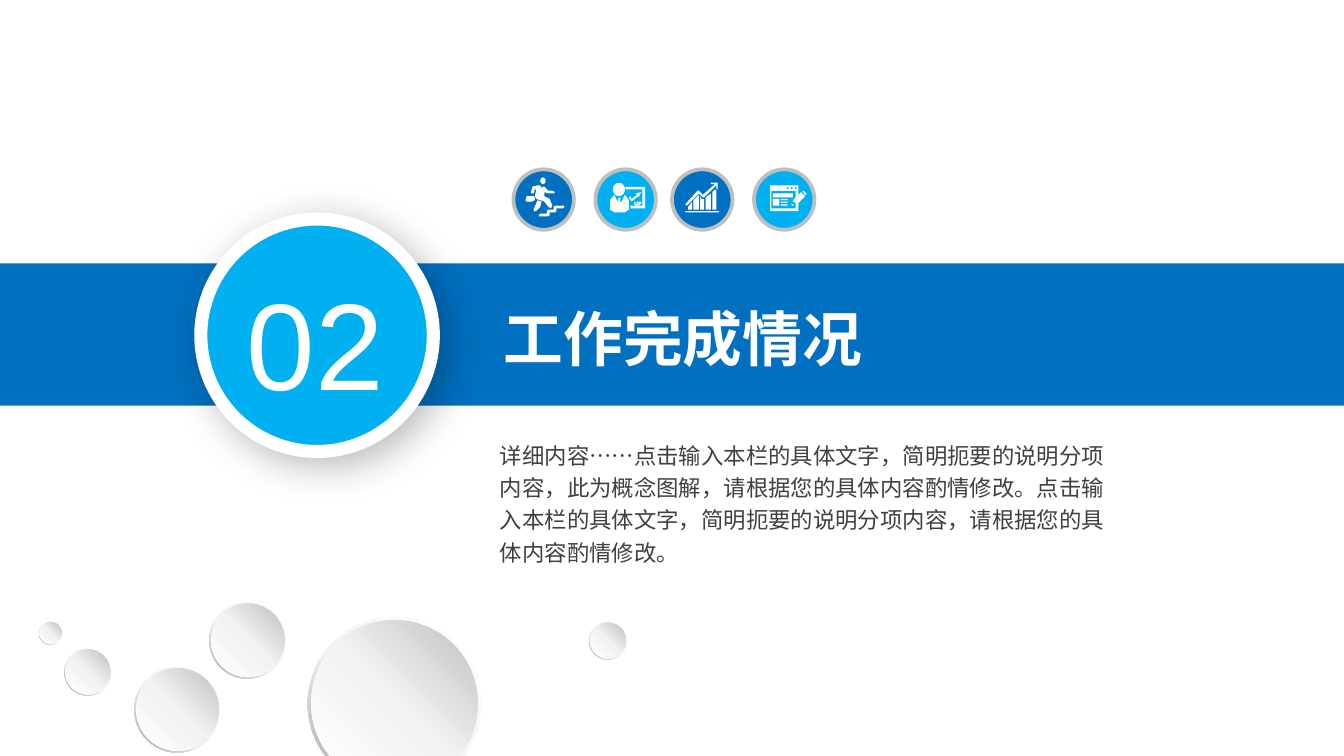
"""Build a section-divider slide with a banner, a numbered badge, four icons and bubbles."""
from dataclasses import dataclass
from typing import Any, Optional, Union

import lxml.etree
import pptx
import pptx.dml.color
import pptx.enum.shapes
import pptx.enum.text
import pptx.oxml.ns
import pptx.util

Pt = pptx.util.Pt
qn = pptx.oxml.ns.qn
SHAPES = pptx.enum.shapes.MSO_SHAPE
ALIGN = pptx.enum.text.PP_ALIGN

FONT = "Arial"
WHITE, BLUE, SKY, GREY, INK = "FFFFFF", "0170C0", "01B0F1", "BFBFBF", "404040"
ICON_TOP, ICON_SIZE, GRID = 90.72, 32.4, 0.72
RIM_STOPS = ((0, WHITE), (55, "F2F2F2"), (100, "A6A6A6"))
DISC_STOPS = ((0, WHITE), (51, "F2F2F2"), (100, GREY))

Contour = tuple[tuple[int, int], ...]
Stops = tuple[tuple[int, str], ...]


@dataclass(frozen=True)
class Outline:
    contours: tuple[Contour, ...]


@dataclass(frozen=True)
class Preset:
    kind: Any
    left: int
    top: int
    width: int
    height: int


@dataclass(frozen=True)
class Icon:
    left: float
    fill: str
    pieces: tuple[Union[Outline, Preset], ...]


@dataclass(frozen=True)
class Bubble:
    left: float
    top: float
    size: float


@dataclass(frozen=True)
class Label:
    text: str
    left: float
    top: float
    width: float
    height: float
    size: float
    colour: str
    bold: bool = False
    align: Any = ALIGN.LEFT
    line_spacing: Optional[float] = None
    insets: tuple[float, float] = (5.04, 2.88)


def outline(*contours: Contour) -> Outline:
    return Outline(contours)


def bar(left: int, top: int, width: int, height: int) -> Preset:
    return Preset(SHAPES.RECTANGLE, left, top, width, height)


def dot(centre: int) -> Contour:
    return ((centre, 13), (centre - 1, 14), (centre, 15), (centre + 1, 14))


RUNNER = (
    outline(((20, 33), (25, 33), (25, 31), (26, 30), (30, 30), (30, 28), (31, 27), (38, 27), (38, 28),
             (37, 29), (32, 29), (32, 31), (31, 32), (27, 32), (27, 34), (26, 35), (19, 35), (19, 34))),
    outline(((10, 24), (14, 24), (16, 23), (16, 21), (15, 20), (10, 20), (9, 23))),
    outline(((15, 30), (18, 23), (21, 24), (20, 28), (17, 31), (15, 31))),
    outline(((22, 13), (23, 13), (26, 16), (29, 16), (31, 17), (30, 18), (26, 18), (23, 17), (23, 20),
             (27, 22), (29, 27), (28, 29), (26, 28), (23, 24), (17, 22), (16, 20), (17, 15), (16, 15),
             (15, 18), (13, 18), (14, 13), (18, 12), (20, 12), (21, 14))),
    Preset(SHAPES.OVAL, 20, 6, 4, 5),
)
PRESENTER = (
    outline(((22, 13), (23, 15), (35, 15), (35, 27), (26, 27), (26, 29), (37, 29), (37, 13))),
    Preset(SHAPES.OVAL, 13, 10, 9, 10),
    outline(((26, 20), (25, 21), (27, 24), (32, 20), (32, 21), (34, 17), (30, 18), (31, 19), (27, 22))),
    outline(((22, 19), (19, 25), (18, 22), (19, 22), (18, 21), (17, 22), (17, 25), (14, 19), (11, 23),
             (11, 30), (14, 32), (22, 32), (25, 30), (25, 23))),
    outline(((29, 24), (29, 26), (30, 27), (31, 27), (32, 26), (32, 24), (31, 24), (31, 26), (30, 26), (30, 24))),
    outline(((32, 24), (32, 27), (33, 27), (33, 26), (34, 26), (34, 24))),
)
GROWTH = (
    bar(10, 31, 25, 1),
    outline(((12, 30), (15, 30), (15, 24), (12, 28))),
    outline(((16, 30), (20, 30), (20, 19), (16, 23))),
    outline(((21, 30), (24, 30), (24, 22), (22, 22), (21, 20))),
    outline(((25, 30), (29, 30), (29, 18), (25, 21))),
    outline(((30, 30), (33, 30), (33, 16), (32, 15), (30, 17))),
    outline(((11, 27), (20, 18), (23, 21), (24, 21), (33, 12), (33, 15), (34, 15), (34, 10), (29, 10),
             (29, 11), (32, 11), (23, 19), (20, 16), (19, 16), (10, 26))),
)
BROWSER = (
    outline(((12, 12), (33, 12), (33, 31), (12, 31)), ((13, 16), (13, 29), (31, 29), (31, 16)),
            *(dot(centre) for centre in (25, 28, 31))),
    bar(14, 18, 15, 3),
    bar(14, 22, 5, 5),
    *(bar(20, top, 5, 1) for top in (22, 24, 26)),
    outline(((28, 25), (28, 27), (30, 27))),
    outline(((38, 19), (39, 19), (39, 18), (37, 16), (36, 16))),
    outline(((35, 17), (29, 23), (29, 24), (31, 25), (32, 26), (38, 20))),
)
ICONS = (Icon(275.04, BLUE, RUNNER), Icon(318.96, SKY, PRESENTER),
         Icon(360, BLUE, GROWTH), Icon(403.92, SKY, BROWSER))
BUBBLES = (Bubble(72, 357.12, 46.08), Bubble(315.6, 333.2, 20.16), Bubble(164.88, 330.48, 92.88),
           Bubble(112.2, 322.56, 41.04), Bubble(34.4, 347.4, 25.2), Bubble(20.9, 333, 12.4))
TITLE = Label("工作完成情况", 262.8, 158.4, 278.64, 46.08, 32, WHITE, bold=True, insets=(7.2, 3.6))
DETAIL = Label(
    "详细内容……点击输入本栏的具体文字，简明扼要的说明分项内容，此为概念图解，请根据您的具体内容酌情修改。"
    "点击输入本栏的具体文字，简明扼要的说明分项内容，请根据您的具体内容酌情修改。",
    262.8, 231.12, 335.52, 75.6, 12, INK, line_spacing=1.2)
NUMBER = Label("02", 121.68, 140.4, 94.32, 85.68, 66, WHITE, align=ALIGN.CENTER)


def rgb(colour: str) -> pptx.dml.color.RGBColor:
    return pptx.dml.color.RGBColor.from_string(colour)


def paint(shape: Any, fill: str, line: Optional[str] = None, line_width: float = 0) -> None:
    shape.shadow.inherit = False
    shape.fill.solid()
    shape.fill.fore_color.rgb = rgb(fill)
    if line is None:
        shape.line.fill.background()
    else:
        shape.line.color.rgb = rgb(line)
        shape.line.width = Pt(line_width)


def add_preset(shapes: Any, kind: Any, left: float, top: float, width: float, height: float) -> Any:
    return shapes.add_shape(kind, Pt(left), Pt(top), Pt(width), Pt(height))


def add_label(shapes: Any, label: Label) -> None:
    box = shapes.add_textbox(Pt(label.left), Pt(label.top), Pt(label.width), Pt(label.height))
    frame = box.text_frame
    frame.word_wrap = True
    frame.auto_size = pptx.enum.text.MSO_AUTO_SIZE.SHAPE_TO_FIT_TEXT
    frame.margin_left = frame.margin_right = Pt(label.insets[0])
    frame.margin_top = frame.margin_bottom = Pt(label.insets[1])
    frame.text = label.text
    paragraph = frame.paragraphs[0]
    paragraph.alignment = label.align
    paragraph.line_spacing = label.line_spacing
    font = paragraph.runs[0].font
    font.name, font.size, font.bold = FONT, Pt(label.size), label.bold
    font.color.rgb = rgb(label.colour)


def add_icon(shapes: Any, icon: Icon) -> None:
    group = shapes.add_group_shape().shapes
    paint(add_preset(group, SHAPES.OVAL, icon.left, ICON_TOP, ICON_SIZE, ICON_SIZE), icon.fill, GREY, 2)
    for piece in icon.pieces:
        if isinstance(piece, Preset):
            shape = add_preset(group, piece.kind, icon.left + piece.left * GRID, ICON_TOP + piece.top * GRID,
                               piece.width * GRID, piece.height * GRID)
        else:
            builder = group.build_freeform(*piece.contours[0][0], scale=Pt(GRID))
            for index, contour in enumerate(piece.contours):
                if index:
                    builder.move_to(*contour[0])
                builder.add_line_segments(contour[1:], close=True)
            shape = builder.convert_to_shape(Pt(icon.left), Pt(ICON_TOP))
        paint(shape, WHITE)


def add_shadow(shape: Any, blur: float, distance: float, angle: int, opacity: int) -> None:
    effects = shape._element.spPr.find(qn("a:effectLst"))
    shadow = lxml.etree.SubElement(effects, qn("a:outerShdw"), blurRad=str(Pt(blur)), dist=str(Pt(distance)),
                                   dir=str(angle * 60000), algn="ctr", rotWithShape="0")
    colour = lxml.etree.SubElement(shadow, qn("a:srgbClr"), val="000000")
    lxml.etree.SubElement(colour, qn("a:alpha"), val=str(opacity * 1000))


def paint_gradient(shape: Any, stops: Stops, angle: int) -> None:
    paint(shape, WHITE)
    shape.fill.gradient()
    shape.fill.gradient_angle = 360 - angle
    stop_list = next(shape._element.spPr.iter(qn("a:gsLst")))
    for default_stop in list(stop_list):
        stop_list.remove(default_stop)
    for position, colour in stops:
        stop = lxml.etree.SubElement(stop_list, qn("a:gs"), pos=str(position * 1000))
        lxml.etree.SubElement(stop, qn("a:srgbClr"), val=colour)


def add_bubble(shapes: Any, bubble: Bubble) -> None:
    group = shapes.add_group_shape().shapes
    rim = add_preset(group, SHAPES.DONUT, bubble.left, bubble.top, bubble.size, bubble.size)
    rim.adjustments[0] = 0.049
    paint_gradient(rim, RIM_STOPS, 135)
    inset = 0.02 * bubble.size
    size = bubble.size - 2 * inset
    disc = add_preset(group, SHAPES.OVAL, bubble.left + inset, bubble.top + inset, size, size)
    paint_gradient(disc, DISC_STOPS, 315)


def main() -> None:
    presentation = pptx.Presentation()
    presentation.slide_width, presentation.slide_height = Pt(720), Pt(405)
    shapes = presentation.slides.add_slide(presentation.slide_layouts[6]).shapes
    paint(add_preset(shapes, SHAPES.RECTANGLE, 0, 141.12, 720, 76.32), BLUE)
    add_label(shapes, TITLE)
    add_label(shapes, DETAIL)
    for icon in ICONS:
        add_icon(shapes, icon)
    badge = add_preset(shapes, SHAPES.OVAL, 107.6, 117.36, 124.56, 124.56)
    paint(badge, SKY, WHITE, 7)
    add_shadow(badge, 22, 6, 45, 28)
    add_label(shapes, NUMBER)
    for bubble in BUBBLES:
        add_bubble(shapes, bubble)
    presentation.save("out.pptx")


if __name__ == "__main__":
    main()
